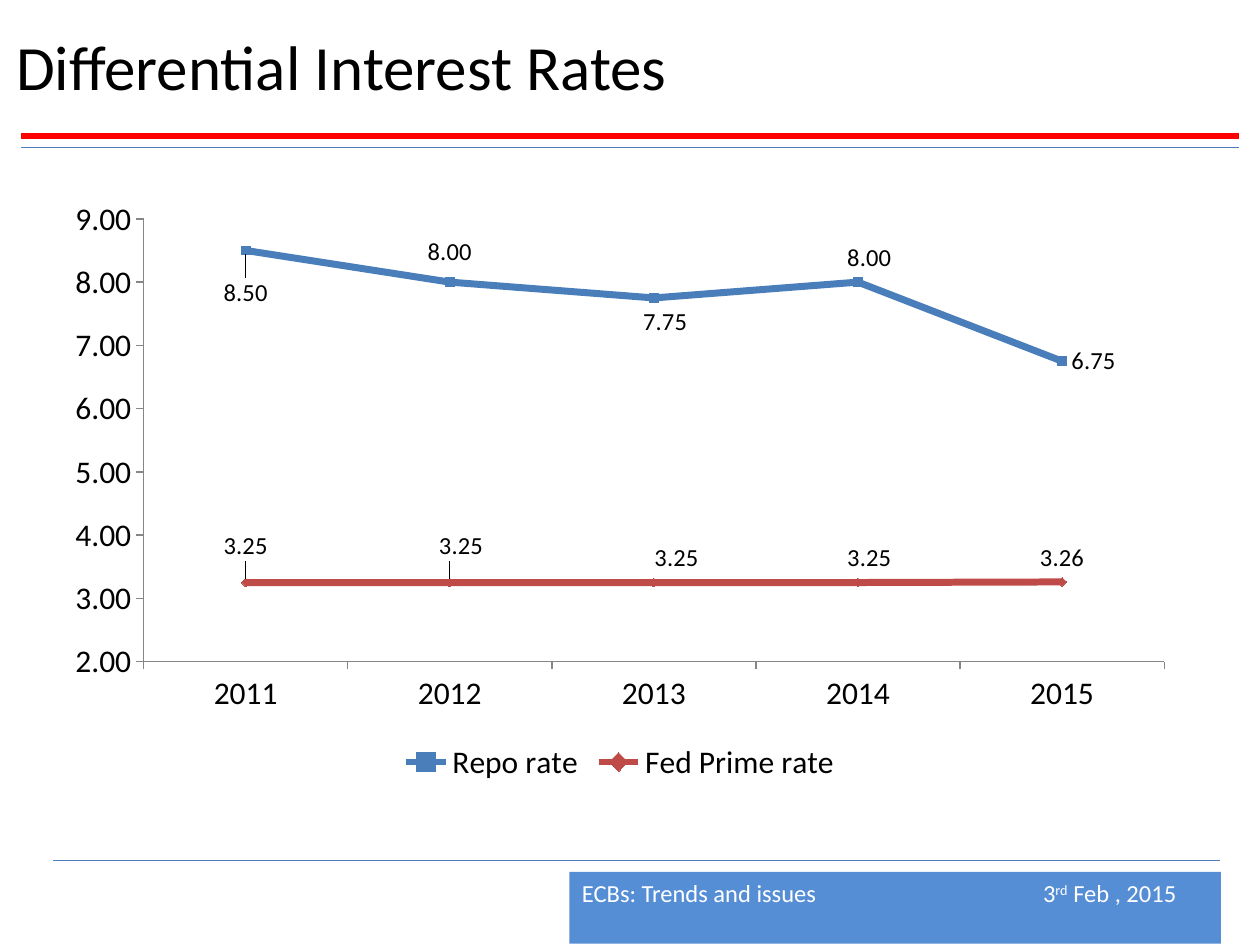
from dataclasses import dataclass

from lxml.etree import SubElement
from pptx import Presentation
from pptx.chart.data import CategoryChartData
from pptx.dml.color import RGBColor
from pptx.enum.chart import (XL_CHART_TYPE, XL_LABEL_POSITION as Pos,
                             XL_LEGEND_POSITION, XL_MARKER_STYLE as Mark,
                             XL_TICK_MARK)
from pptx.enum.shapes import MSO_CONNECTOR, MSO_SHAPE
from pptx.enum.text import MSO_ANCHOR
from pptx.oxml import parse_xml
from pptx.oxml.ns import qn
from pptx.util import Inches, Pt


@dataclass(frozen=True)
class Theme:
    font: str = "Calibri"
    text: str = "000000"
    light: str = "FFFFFF"
    accent: str = "FF0000"
    rule: str = "4B7EBC"
    footer: str = "558ED5"
    axis: str = "868686"
    repo: str = "4A7EBB"
    fed: str = "BE4B48"
    title: int = 36
    chart: int = 18
    small: int = 14


@dataclass(frozen=True)
class Rule:
    left: float
    right: float
    top: float
    color: str
    width: float


@dataclass(frozen=True)
class Label:
    """Side of the point, then a shift as a share of the chart."""
    side: Pos
    dx: float = 0
    dy: float = 0


@dataclass(frozen=True)
class Rate:
    name: str
    color: str
    mark: Mark
    vals: tuple
    labels: tuple


THEME = Theme()
RULES = (
    Rule(0.17, 9.83, 1.08, THEME.accent, 3),
    Rule(0.17, 9.83, 1.17, THEME.rule, 0.75),
    Rule(0.42, 9.68, 6.83, THEME.rule, 0.75),
)
YEARS = [str(year) for year in range(2011, 2016)]
RATES = (
    Rate("Repo rate", THEME.repo, Mark.SQUARE, (8.5, 8, 7.75, 8, 6.75),
         (Label(Pos.BELOW, 0, 0.03), Label(Pos.ABOVE, 0, -0.01),
          Label(Pos.BELOW, 0.01), Label(Pos.ABOVE, 0.01), Label(Pos.RIGHT))),
    Rate("Fed Prime rate", THEME.fed, Mark.DIAMOND,
         (3.25, 3.25, 3.25, 3.25, 3.26),
         (Label(Pos.ABOVE, 0, -0.02), Label(Pos.ABOVE, 0.01, -0.02),
          Label(Pos.ABOVE, 0.02), Label(Pos.ABOVE, 0.01), Label(Pos.ABOVE))),
)


def rgb(code: str) -> RGBColor:
    return RGBColor.from_string(code)


def style(font, size: int, color: str) -> None:
    for key, val in {"name": THEME.font, "size": Pt(size)}.items():
        setattr(font, key, val)
    font.color.rgb = rgb(color)


def layout(**parts):
    """Make a manual chart layout from its parts."""
    node = parse_xml('<c:layout xmlns:c="http://schemas.openxmlformats.org/'
                     'drawingml/2006/chart"><c:manualLayout/></c:layout>')
    for key, val in parts.items():
        SubElement(node[0], qn(f"c:{key}")).set("val", str(val))
    return node


def add_rule(slide, rule: Rule) -> None:
    line = slide.shapes.add_connector(
        MSO_CONNECTOR.STRAIGHT, Inches(rule.left), Inches(rule.top),
        Inches(rule.right), Inches(rule.top))
    line.line.color.rgb = rgb(rule.color)
    line.line.width = Pt(rule.width)
    SubElement(line._element.spPr, qn("a:effectLst"))


def add_title(slide) -> None:
    box = slide.shapes.add_textbox(Inches(0.03), Inches(0.03),
                                   Inches(9.97), Inches(0.97))
    frame = box.text_frame
    frame.word_wrap = True
    frame.vertical_anchor = MSO_ANCHOR.MIDDLE
    frame.text = "Differential Interest Rates"
    style(frame.paragraphs[0].font, THEME.title, THEME.text)


def add_footer(slide) -> None:
    box = slide.shapes.add_shape(MSO_SHAPE.RECTANGLE, Inches(4.52),
                                 Inches(6.92), Inches(5.17), Inches(0.57))
    box.shadow.inherit = False
    box.fill.solid()
    box.fill.fore_color.rgb = rgb(THEME.footer)
    box.line.fill.background()
    frame = box.text_frame
    frame.vertical_anchor = MSO_ANCHOR.TOP
    para = frame.paragraphs[0]
    props = para._p.get_or_add_pPr()
    props.set("algn", "l")
    tab = SubElement(SubElement(props, qn("a:tabLst")), qn("a:tab"))
    tab.set("pos", str(Inches(3.66)))
    tab.set("algn", "l")
    for text, base in (("ECBs: Trends and issues\t3", 0), ("rd", 30000),
                       (" Feb , 2015", 0)):
        run = para.add_run()
        run.text = text
        style(run.font, THEME.small, THEME.light)
        if base:
            run._r.get_or_add_rPr().set("baseline", str(base))


def style_axis(axis) -> None:
    formats = {"has_major_gridlines": False,
               "major_tick_mark": XL_TICK_MARK.OUTSIDE,
               "minor_tick_mark": XL_TICK_MARK.NONE}
    for key, val in formats.items():
        setattr(axis, key, val)
    axis.format.line.color.rgb = rgb(THEME.axis)
    axis.format.line.width = Pt(0.75)


def style_rate(line, rate: Rate) -> None:
    line.smooth = False
    line.format.line.color.rgb = rgb(rate.color)
    line.format.line.width = Pt(4)
    line.marker.style = rate.mark
    line.marker.size = 5
    shade = line.marker.format
    shade.fill.solid()
    shade.fill.fore_color.rgb = rgb(rate.color)
    shade.line.color.rgb = rgb(rate.color)
    group = line.data_labels
    formats = {"show_value": True, "number_format": "0.00",
               "number_format_is_linked": False}
    for key, val in formats.items():
        setattr(group, key, val)
    style(group.font, THEME.small, THEME.text)
    for idx, label in enumerate(rate.labels):
        tag = line.points[idx].data_label
        style(tag.font, THEME.small, THEME.text)
        tag.position = label.side
        if label.dx or label.dy:
            node = group._element.findall(qn("c:dLbl"))[idx]
            node.insert(1, layout(x=label.dx, y=label.dy))


def add_rates(slide) -> None:
    data = CategoryChartData(number_format="0.00")
    data.categories = YEARS
    for rate in RATES:
        data.add_series(rate.name, rate.vals)
    chart = slide.shapes.add_chart(
        XL_CHART_TYPE.LINE_MARKERS, Inches(0.42), Inches(1.5), Inches(9),
        Inches(4.75), data).chart
    style(chart.font, THEME.chart, THEME.text)
    chart.has_title = False
    chart.has_legend = True
    chart.legend.position = XL_LEGEND_POSITION.BOTTOM
    chart.legend.include_in_layout = False
    for axis in (chart.category_axis, chart.value_axis):
        style_axis(axis)
    scale = {"minimum_scale": 2, "maximum_scale": 9, "major_unit": 1}
    for key, val in scale.items():
        setattr(chart.value_axis, key, val)
    ticks = chart.value_axis.tick_labels
    ticks.number_format = "0.00"
    ticks.number_format_is_linked = False
    plot = chart.plots[0]
    plot.vary_by_categories = False
    for line, rate in zip(plot.series, RATES):
        style_rate(line, rate)
    area = chart._chartSpace.chart.plotArea
    for old in area.findall(qn("c:layout")):
        area.remove(old)
    area.insert(0, layout(layoutTarget="inner", xMode="edge", yMode="edge",
                          x=0.08, y=0.05, w=0.9, h=0.74))


def main() -> None:
    deck = Presentation()
    deck.slide_width, deck.slide_height = Inches(10), Inches(7.5)
    slide = deck.slides.add_slide(deck.slide_layouts[6])
    for rule in RULES:
        add_rule(slide, rule)
    add_footer(slide)
    add_title(slide)
    add_rates(slide)
    deck.save("out.pptx")


if __name__ == "__main__":
    main()
